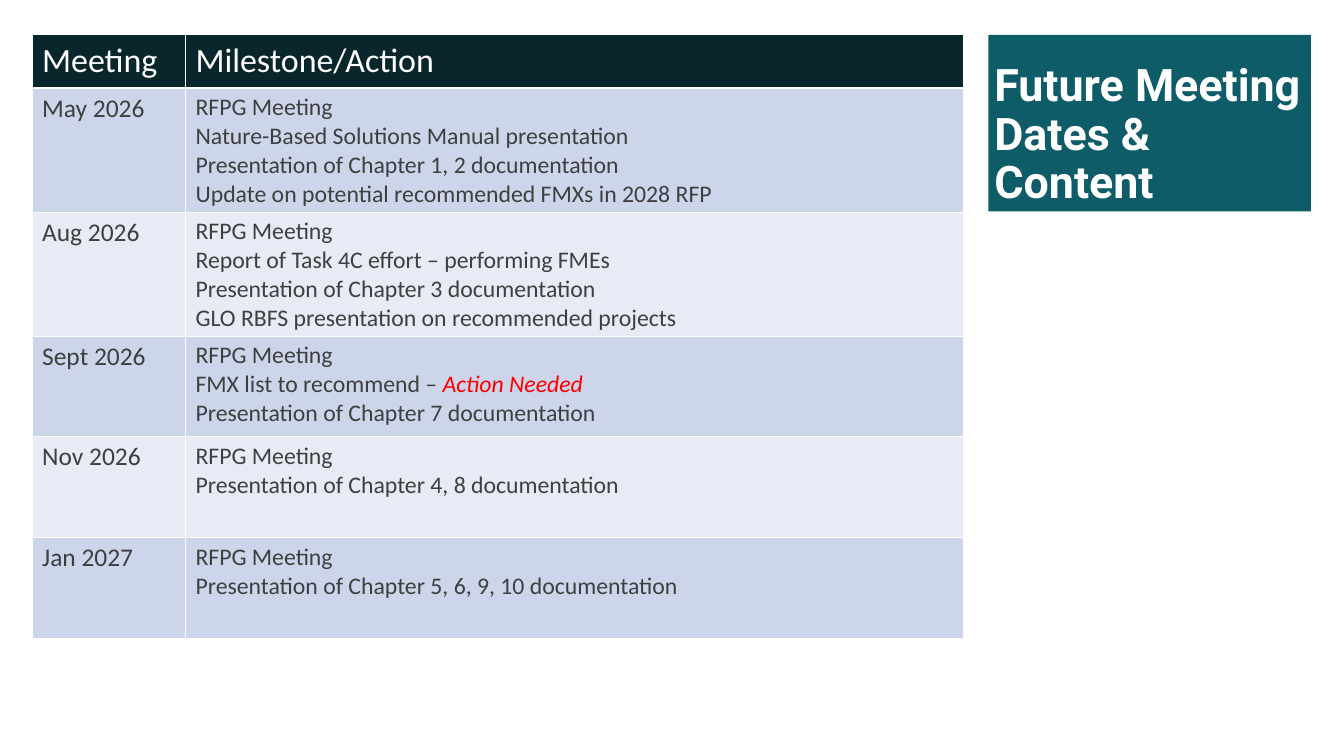
from lxml.etree import SubElement as Sub
from pptx import Presentation as Deck
from pptx.dml.color import RGBColor as Color
from pptx.enum.text import MSO_ANCHOR as Anchor
from pptx.oxml.ns import qn
from pptx.util import Pt

TITLE = "Future Meeting Dates & Content"
HEAD = ("Meeting", "Milestone/Action")
ALERT = "Action Needed"
DATES = [
    ("May 2026", ["Nature-Based Solutions Manual presentation",
                  "Presentation of Chapter 1, 2 documentation",
                  "Update on potential recommended FMXs in 2028 RFP"]),
    ("Aug 2026", ["Report of Task 4C effort – performing FMEs",
                  "Presentation of Chapter 3 documentation",
                  "GLO RBFS presentation on recommended projects"]),
    ("Sept 2026", ["FMX list to recommend – " + ALERT,
                   "Presentation of Chapter 7 documentation"]),
    ("Nov 2026", ["Presentation of Chapter 4, 8 documentation"]),
    ("Jan 2027", ["Presentation of Chapter 5, 6, 9, 10 documentation"]),
]
FIRST = "RFPG Meeting"

WHITE = Color(0xFF, 0xFF, 0xFF)
TEAL = Color(0x0E, 0x5C, 0x68)
DARK = Color(0x09, 0x26, 0x2C)
GRAY = Color(0x3F, 0x3F, 0x3F)
RED = Color(0xFF, 0x00, 0x00)
BANDS = (Color(0xCC, 0xD5, 0xEA), Color(0xE7, 0xEB, 0xF5))

SCALE = 9144
WIDE, HIGH = 2199, 1237
LEFT, TOP = 53, 57
COLS = (251, 1272)
HEAD_H, ROW_H = 87, 165
PAD_X, PAD_Y = 16, 8
BOX = (1617, 57, 528, 289)


def px(n):
    return n * SCALE


def style(font, name, size, color):
    font.name, font.size = name, Pt(size)
    font.color.rgb = color


def edge(cell, side, width):
    line = Sub(cell._tc.get_or_add_tcPr(), qn("a:ln" + side), w=str(Pt(width)))
    Sub(Sub(line, qn("a:solidFill")), qn("a:srgbClr"), val=str(WHITE))


def fill_cell(cell, lines, size, color, back, base):
    cell.margin_left = cell.margin_right = px(PAD_X)
    cell.margin_top = cell.margin_bottom = px(PAD_Y)
    for side, width in zip("LRTB", (1, 1, 1, base)):
        edge(cell, side, width)
    cell.fill.solid()
    cell.fill.fore_color.rgb = back
    frame = cell.text_frame
    for i, text in enumerate(lines):
        para = frame.add_paragraph() if i else frame.paragraphs[0]
        style(para.font, "Calibri", size, color)
        plain, alert, _ = text.partition(ALERT)
        para.add_run().text = plain
        if alert:
            run = para.add_run()
            run.text = alert
            run.font.italic = True
            run.font.color.rgb = RED


def add_title(slide):
    box = slide.shapes.add_textbox(*map(px, BOX))
    box.fill.solid()
    box.fill.fore_color.rgb = TEAL
    frame = box.text_frame
    frame.word_wrap = True
    frame.vertical_anchor = Anchor.BOTTOM
    para = frame.paragraphs[0]
    para.text = TITLE
    para.line_spacing = 0.9
    style(para.font, "Roboto", 52.8, WHITE)
    para.font.bold = True


def add_dates(slide):
    high = HEAD_H + ROW_H * len(DATES)
    size = map(px, (LEFT, TOP, sum(COLS), high))
    table = slide.shapes.add_table(len(DATES) + 1, len(COLS), *size).table
    for col, width in zip(table.columns, COLS):
        col.width = px(width)
    for i, row in enumerate(table.rows):
        row.height = px(ROW_H if i else HEAD_H)
    for c, text in enumerate(HEAD):
        fill_cell(table.cell(0, c), [text], 40, WHITE, DARK, 3)
    for r, (date, items) in enumerate(DATES, 1):
        back = BANDS[(r - 1) % 2]
        fill_cell(table.cell(r, 0), [date], 30, GRAY, back, 1)
        fill_cell(table.cell(r, 1), [FIRST] + items, 28, GRAY, back, 1)


def main():
    deck = Deck()
    deck.slide_width, deck.slide_height = px(WIDE), px(HIGH)
    slide = deck.slides.add_slide(deck.slide_layouts[6])
    add_title(slide)
    add_dates(slide)
    deck.save("out.pptx")


if __name__ == "__main__":
    main()
